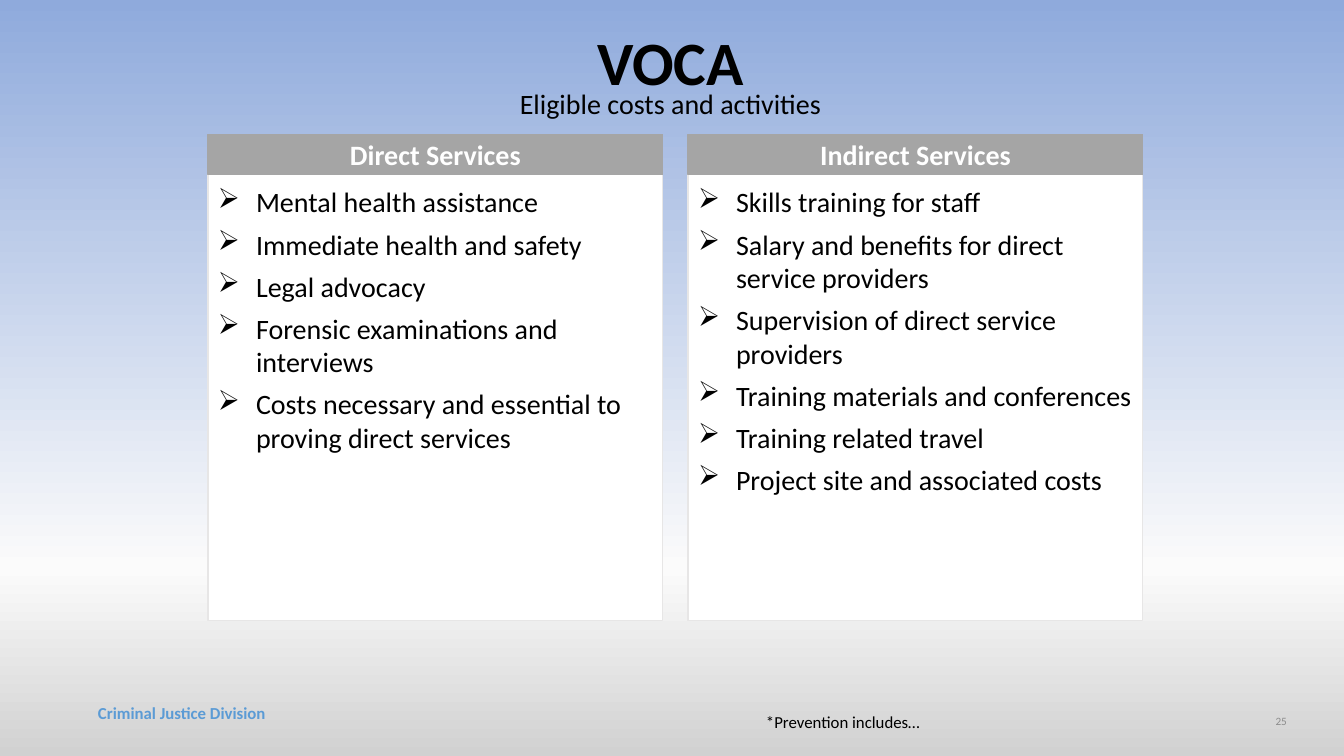
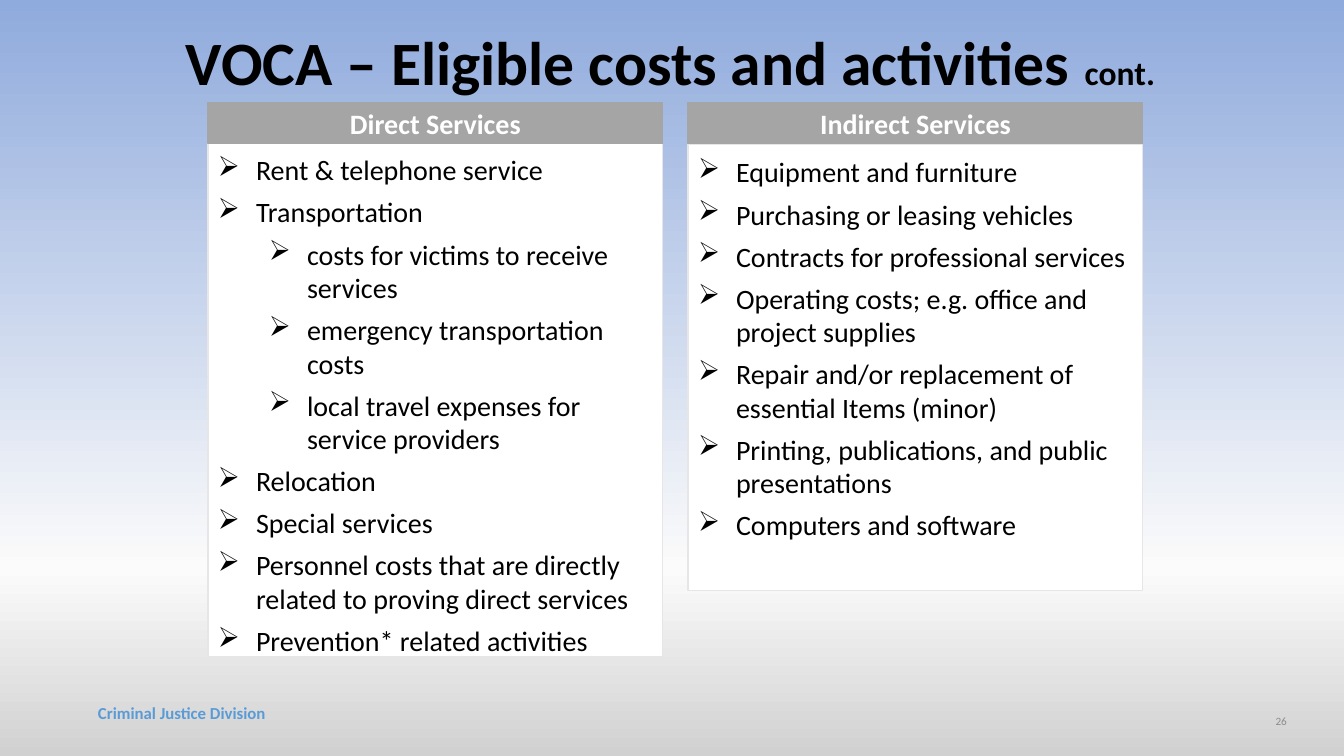
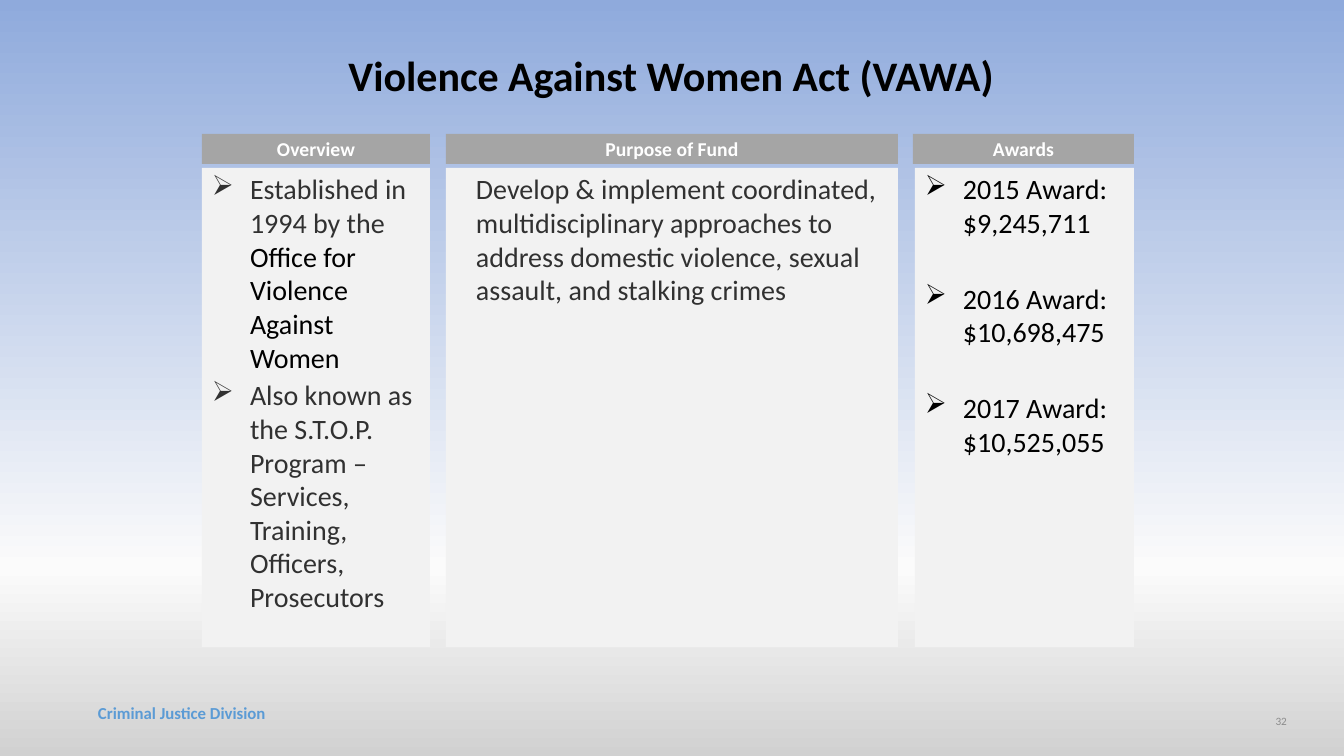
from copy import deepcopy

from pptx import Presentation
from pptx.dml.color import RGBColor
from pptx.enum.shapes import MSO_SHAPE as Shape
from pptx.enum.text import MSO_ANCHOR as Anchor, PP_ALIGN as Align
from pptx.oxml.ns import qn
from pptx.util import Emu, Pt

WIDTH, HEIGHT = 1344, 756
SCALE = 12192000 / WIDTH
FONT = "Calibri"
BLACK, WHITE, DARK = "000000", "FFFFFF", "313131"
HEADER, PALE, BORDER = "A5A5A5", "F2F2F2", "E7E6E6"
FOOTER_BLUE, NUMBER_GRAY = "5B9BD5", "8C8C8C"
BACKGROUND = [(0, "8FAADC"), (0.75, "FBFBFB"), (1, "D1D1D1")]

FOOTER = "Criminal Justice Division"
TITLE_AREA = (54, 32, 1233, 51)
PAIR_LEFT, PAIR_WIDTH, PAIR_GAP, PAIR_HEADER = 208, 455, 25, 41

# A tuple holds the sub-bullets of the line before it;
# a list holds runs as (text, format) pairs.
VOCA_COLUMNS = [
    ("Direct Services", (175, 446), [
        "Mental health assistance",
        "Immediate health and safety",
        "Legal advocacy",
        "Forensic examinations and interviews",
        "Costs necessary and essential to proving direct services",
    ]),
    ("Indirect Services", (175, 446), [
        "Skills training for staff",
        "Salary and benefits for direct service providers",
        "Supervision of direct service providers",
        "Training materials and conferences",
        "Training related travel",
        "Project site and associated costs",
    ]),
]
MORE_COLUMNS = [
    ("Direct Services", (143, 514), [
        "Rent & telephone service",
        "Transportation",
        (
            "costs for victims to receive services",
            "emergency transportation costs",
            "local travel expenses for service providers",
        ),
        "Relocation",
        "Special services",
        "Personnel costs that are directly related to proving direct services",
        "Prevention* related activities",
    ]),
    ("Indirect Services", (145, 446), [
        "Equipment and furniture",
        "Purchasing or leasing vehicles",
        "Contracts for professional services",
        "Operating costs; e.g. office and project supplies",
        "Repair and/or replacement of essential Items (minor)",
        "Printing, publications, and public presentations",
        "Computers and software",
    ]),
]
# header, header (left, width), body (left, width), lines, body format
VAWA_COLUMNS = [
    ("Overview", (202, 228), (202, 228), [
        [("Established in 1994 by the ", {}),
         ("Office for Violence Against Women", {"color": BLACK})],
        "Also known as the S.T.O.P. Program – Services, Training, Officers, "
        "Prosecutors",
    ], {"color": DARK, "bullet": "➢", "after": 3}),
    ("Purpose of Fund", (446, 452), (446, 452), [
        "Develop & implement coordinated, multidisciplinary approaches to "
        "address domestic violence, sexual assault, and stalking crimes",
    ], {"color": DARK, "indent": 20, "after": 3}),
    ("Awards", (913, 221), (915, 219), [
        "2015 Award: $9,245,711",
        "2016 Award: $10,698,475",
        "2017 Award: $10,525,055",
    ], {"bullet": "➢", "after": 30}),
]


def px(length):
    return Emu(round(length * SCALE))


def rgb(color):
    return RGBColor.from_string(color)


def leveled(lines):
    """Yield (level, line), with the lines of a tuple one level down."""
    for line in lines:
        if isinstance(line, tuple):
            yield from ((1, sub) for sub in line)
        else:
            yield 0, line


def set_indent(para, indent, bullet):
    properties = para._p.get_or_add_pPr()
    properties.set("marL", str(px(indent)))
    if bullet:
        properties.set("indent", str(-px(38)))
        properties.makeelement(qn("a:buChar"), {"char": bullet})
        properties.append(
            properties.makeelement(qn("a:buChar"), {"char": bullet}))


def write(box, lines, size=20, color=BLACK, bold=False, align=Align.LEFT,
          anchor=Anchor.TOP, insets=(10, 5, 10, 5), spacing=None, after=0,
          bullet=None, indent=0, wrap=True):
    frame = box.text_frame
    frame.word_wrap = wrap
    frame.vertical_anchor = anchor
    (frame.margin_left, frame.margin_top,
     frame.margin_right, frame.margin_bottom) = map(px, insets)
    for index, (level, line) in enumerate(leveled(lines)):
        para = frame.add_paragraph() if index else frame.paragraphs[0]
        para.alignment = align
        para.level = level
        para.space_after = Pt(after)
        if spacing:
            para.line_spacing = spacing
        set_indent(para, indent + (38 + 51 * level if bullet else 0), bullet)
        runs = line if isinstance(line, list) else [(line, {})]
        for text, change in runs:
            span = para.add_run()
            span.text = text
            span.font.name = FONT
            span.font.size = Pt(change.get("size", size))
            span.font.bold = bold
            span.font.color.rgb = rgb(change.get("color", color))


def add_text(page, area, lines, **style):
    write(page.shapes.add_textbox(*map(px, area)), lines, **style)


def add_panel(page, area, lines, fill, border=None, **style):
    panel = page.shapes.add_shape(Shape.RECTANGLE, *map(px, area))
    panel.shadow.inherit = False
    panel.fill.solid()
    panel.fill.fore_color.rgb = rgb(fill)
    if border:
        panel.line.color.rgb = rgb(border)
        panel.line.width = Pt(0.75)
    else:
        panel.line.fill.background()
    write(panel, lines, **style)


def add_header(page, area, label, **style):
    add_panel(page, area, [label], HEADER, color=WHITE, bold=True,
              align=Align.CENTER, anchor=Anchor.MIDDLE, **style)


def paint_background(master):
    fill = master.background.fill
    fill.gradient()
    fill.gradient_angle = 270
    stop_list = master.element.find(".//" + qn("a:gsLst"))
    stop_list.append(deepcopy(stop_list[-1]))
    for stop, (position, color) in zip(fill.gradient_stops, BACKGROUND):
        stop.position = position
        stop.color.rgb = rgb(color)


def add_page(deck, number, title, area=TITLE_AREA, size=44):
    page = deck.slides.add_slide(deck.slide_layouts[6])
    add_text(page, (88, 698, 616, 30), [FOOTER], size=12, color=FOOTER_BLUE,
             bold=True)
    add_text(page, area, [title], size=size, bold=True, align=Align.CENTER,
             spacing=0.9, insets=(0, 0, 0, 0))
    add_text(page, (1171, 707, 116, 28), [number], size=8, color=NUMBER_GRAY,
             align=Align.RIGHT, anchor=Anchor.MIDDLE, insets=(0, 0, 0, 0))
    return page


def add_pair(page, header_top, columns):
    """Place two equal columns, with the headers over the bodies."""
    insets = (10, 10, 10, 10)
    for index, (label, (top, height), lines) in enumerate(columns):
        left = PAIR_LEFT + index * (PAIR_WIDTH + PAIR_GAP)
        add_panel(page, (left, top, PAIR_WIDTH, height), lines, WHITE, BORDER,
                  bullet="➢", after=6, insets=insets)
        add_header(page, (left, header_top, PAIR_WIDTH, PAIR_HEADER), label,
                   border=HEADER, insets=insets)


def main():
    deck = Presentation()
    deck.slide_width, deck.slide_height = px(WIDTH), px(HEIGHT)
    paint_background(deck.slide_master)

    page = add_page(deck, "25", "VOCA")
    add_text(page, (54, 85, 1233, 107), ["Eligible costs and activities"],
             align=Align.CENTER, spacing=0.9)
    add_pair(page, 134, VOCA_COLUMNS)
    add_text(page, (756, 707, 176, 30), ["*Prevention includes…"], size=12,
             wrap=False)

    page = add_page(deck, "26", [
        ("VOCA – Eligible costs and activities ", {}), ("cont.", {"size": 24})])
    add_pair(page, 103, MORE_COLUMNS)

    page = add_page(deck, "32", "Violence Against Women Act (VAWA)",
                    area=(209, 55, 925, 80), size=30)
    for label, (left, width), (body_left, body_width), lines, style in VAWA_COLUMNS:
        add_header(page, (left, 134, width, 30), label, size=14,
                   insets=(4, 4, 4, 4))
        add_panel(page, (body_left, 168, body_width, 479), lines, PALE,
                  insets=(10, 4, 4, 4), **style)

    deck.save("out.pptx")


if __name__ == "__main__":
    main()
